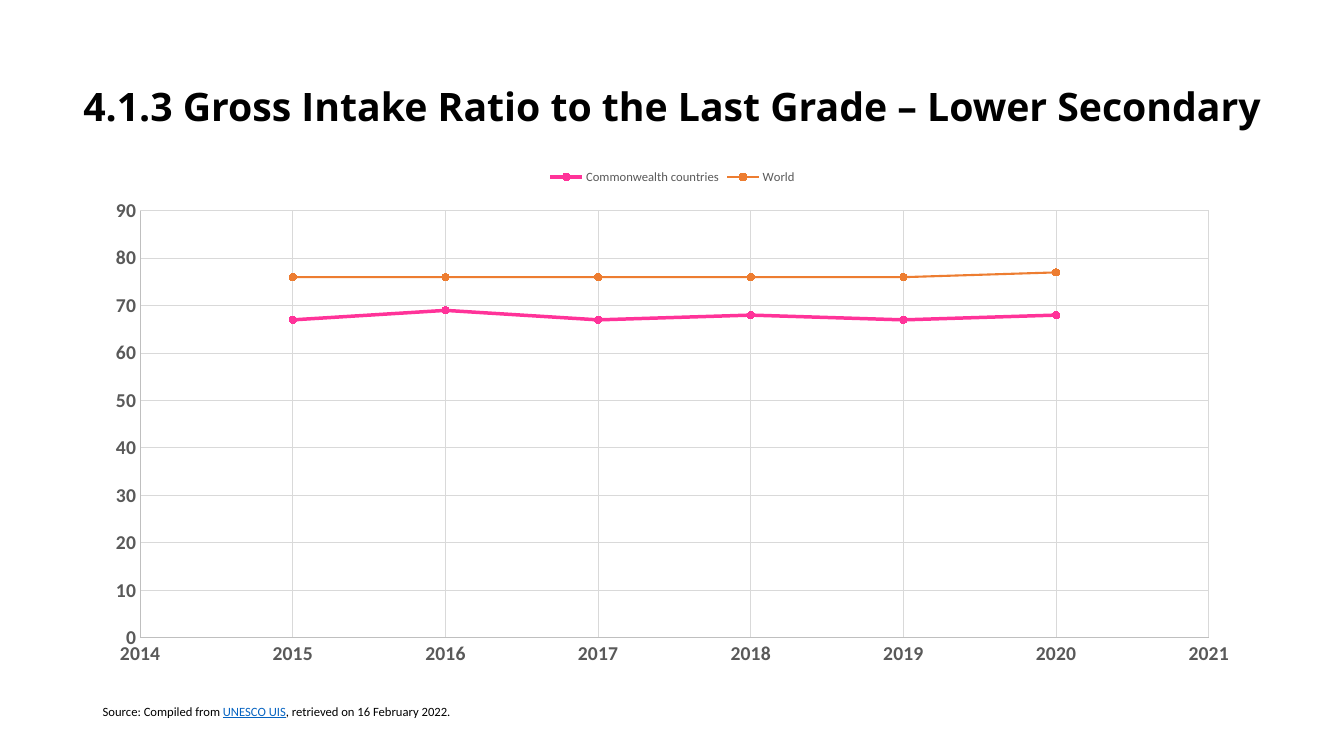
from dataclasses import dataclass

from pptx import Presentation
from pptx.chart.data import XyChartData
from pptx.dml.color import RGBColor
from pptx.enum.chart import (XL_CHART_TYPE, XL_LEGEND_POSITION,
                             XL_MARKER_STYLE, XL_TICK_MARK)
from pptx.enum.text import MSO_ANCHOR, PP_ALIGN
from pptx.slide import Slide
from pptx.text.text import Font
from pptx.util import Inches, Pt

SCATTER_LINES = XL_CHART_TYPE.XY_SCATTER_LINES
LEGEND_TOP = XL_LEGEND_POSITION.TOP
CIRCLE = XL_MARKER_STYLE.CIRCLE
NO_TICK = XL_TICK_MARK.NONE
BOTTOM = MSO_ANCHOR.BOTTOM
CENTER = PP_ALIGN.CENTER


@dataclass(frozen=True)
class Theme:
    title_font: str = "Open Sans"
    body_font: str = "Calibri"
    ink: str = "000000"
    muted: str = "595959"
    link: str = "0563C1"
    axis: str = "BFBFBF"
    grid: str = "D9D9D9"
    pink: str = "FF3399"
    orange: str = "ED7D31"
    title_size: float = 28
    axis_size: float = 14
    chart_size: float = 10
    small_size: float = 9
    hairline: float = 0.75


@dataclass(frozen=True)
class RatioSeries:
    name: str
    color: str
    width: float
    values: tuple[int, ...]


@dataclass(frozen=True)
class SourceRun:
    text: str
    color: str
    underline: bool = False


THEME = Theme()
YEARS = range(2015, 2021)
SERIES = (
    RatioSeries("Commonwealth countries", THEME.pink, 2.5, (67, 69, 67, 68, 67, 68)),
    RatioSeries("World", THEME.orange, 1.5, (76, 76, 76, 76, 76, 77)),
)
SOURCE_RUNS = (
    SourceRun("Source: Compiled from ", THEME.ink),
    SourceRun("UNESCO UIS", THEME.link, True),
    SourceRun(", retrieved on 16 February 2022.", THEME.ink),
)


def style_font(font: Font, name: str, size: float, color: str,
               bold: bool = False) -> None:
    font.name = name
    font.size = Pt(size)
    font.bold = bold
    font.color.rgb = RGBColor.from_string(color)


def style_line(line, color: str, width: float) -> None:
    line.color.rgb = RGBColor.from_string(color)
    line.width = Pt(width)


def add_title(slide: Slide) -> None:
    box = slide.shapes.add_textbox(Inches(0), Inches(0.32), Inches(13.33), Inches(1.02))
    text_frame = box.text_frame
    text_frame.word_wrap = True
    text_frame.vertical_anchor = BOTTOM
    text_frame.text = "4.1.3 Gross Intake Ratio to the Last Grade – Lower Secondary"
    paragraph = text_frame.paragraphs[0]
    paragraph.alignment = CENTER
    paragraph.line_spacing = 0.9
    style_font(paragraph.runs[0].font, THEME.title_font, THEME.title_size, THEME.ink, True)


def add_source(slide: Slide) -> None:
    box = slide.shapes.add_textbox(Inches(0.92), Inches(6.93), Inches(9.83), Inches(0.25))
    box.text_frame.word_wrap = True
    paragraph = box.text_frame.paragraphs[0]
    paragraph.space_after = Pt(6)
    for part in SOURCE_RUNS:
        run = paragraph.add_run()
        run.text = part.text
        style_font(run.font, THEME.body_font, THEME.small_size, part.color)
        run.font.underline = part.underline


def style_axis(axis, minimum: float, maximum: float, step: float, number_format: str) -> None:
    axis.minimum_scale = minimum
    axis.maximum_scale = maximum
    axis.major_unit = step
    axis.major_tick_mark = NO_TICK
    axis.minor_tick_mark = NO_TICK
    axis.has_major_gridlines = True
    style_line(axis.major_gridlines.format.line, THEME.grid, THEME.hairline)
    style_line(axis.format.line, THEME.axis, THEME.hairline)
    labels = axis.tick_labels
    labels.number_format = number_format
    labels.number_format_is_linked = False
    style_font(labels.font, THEME.body_font, THEME.axis_size, THEME.muted, True)


def add_ratio_chart(slide: Slide) -> None:
    chart_data = XyChartData()
    for item in SERIES:
        points = chart_data.add_series(item.name)
        for year, value in zip(YEARS, item.values):
            points.add_data_point(year, value)
    chart = slide.shapes.add_chart(SCATTER_LINES, Inches(0.92), Inches(1.57),
                                   Inches(11.5), Inches(5.14), chart_data).chart
    style_font(chart.font, THEME.body_font, THEME.chart_size, THEME.ink)
    chart.has_title = False

    # Legend
    chart.has_legend = True
    chart.legend.position = LEGEND_TOP
    chart.legend.include_in_layout = False
    style_font(chart.legend.font, THEME.body_font, THEME.small_size, THEME.muted)

    # Axes
    style_axis(chart.category_axis, 2014, 2021, 1, "General")
    style_axis(chart.value_axis, 0, 90, 10, "#,##0")

    # Series lines and markers
    plot = chart.plots[0]
    plot.vary_by_categories = False
    for item, series in zip(SERIES, plot.series):
        style_line(series.format.line, item.color, item.width)
        series.smooth = False
        marker = series.marker
        marker.style = CIRCLE
        marker.size = 5
        marker.format.fill.solid()
        marker.format.fill.fore_color.rgb = RGBColor.from_string(item.color)
        style_line(marker.format.line, item.color, THEME.hairline)


def main() -> None:
    presentation = Presentation()
    presentation.slide_width = Inches(13.33)
    presentation.slide_height = Inches(7.5)
    slide = presentation.slides.add_slide(presentation.slide_layouts[6])
    add_title(slide)
    add_source(slide)
    add_ratio_chart(slide)
    presentation.save("out.pptx")


if __name__ == "__main__":
    main()
